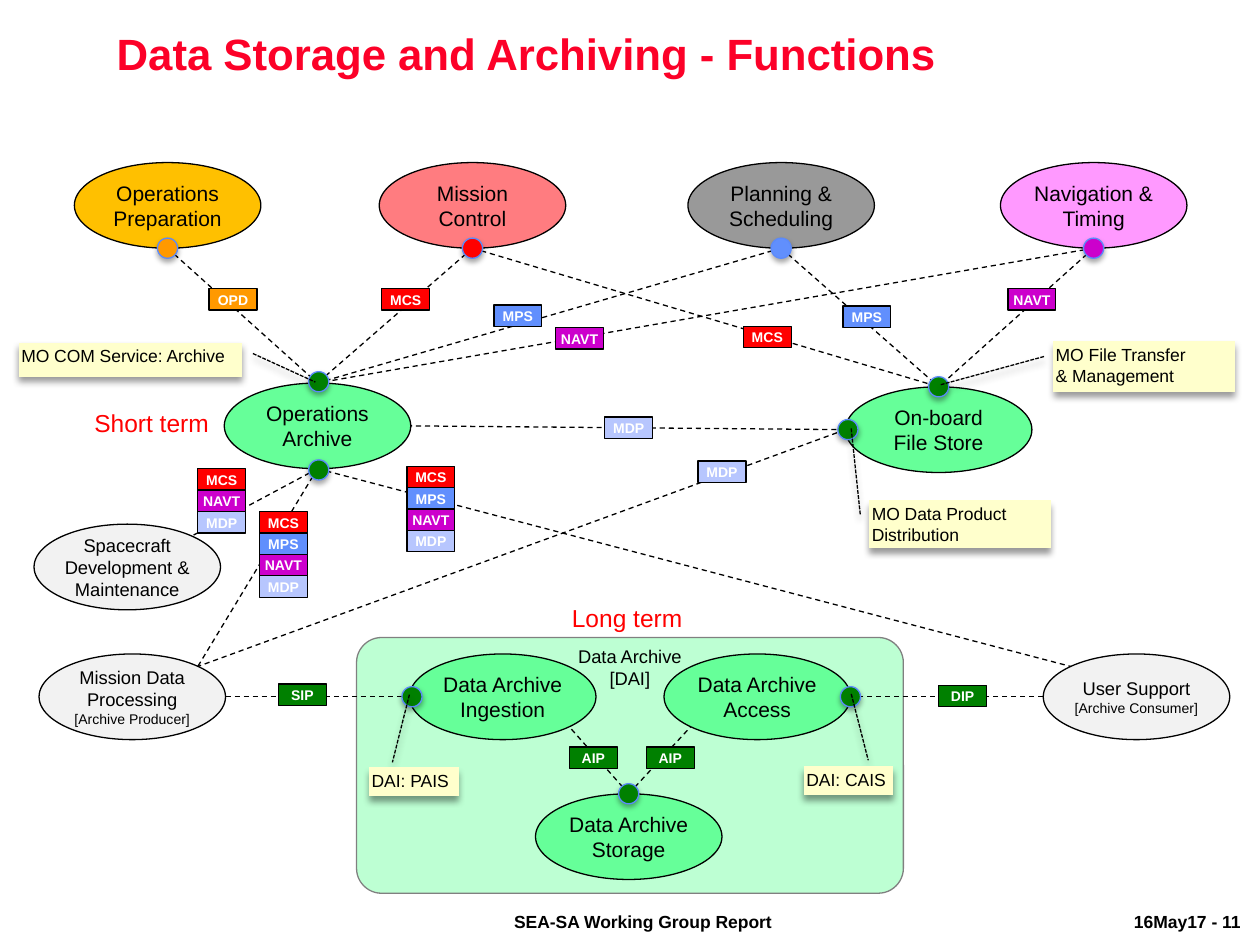
from lxml.etree import SubElement
from pptx import Presentation
from pptx.dml.color import RGBColor
from pptx.enum.dml import MSO_LINE
from pptx.enum.shapes import MSO_CONNECTOR, MSO_SHAPE
from pptx.enum.text import MSO_ANCHOR, PP_ALIGN
from pptx.oxml.ns import qn
from pptx.util import Inches, Pt

BLACK = RGBColor(0x00, 0x00, 0x00)
WHITE = RGBColor(0xFF, 0xFF, 0xFF)
CRIMSON = RGBColor(0xFC, 0x01, 0x28)
RED = RGBColor(0xFF, 0x00, 0x00)
GREEN = RGBColor(0x00, 0x80, 0x00)
MINT = RGBColor(0x66, 0xFF, 0x99)
PALE = RGBColor(0xBD, 0xFF, 0xD3)
EDGE = RGBColor(0x80, 0x80, 0x80)
PINK = RGBColor(0xFF, 0x99, 0xFF)
GRAY = RGBColor(0x99, 0x99, 0x99)
ROSE = RGBColor(0xFF, 0x7C, 0x80)
GOLD = RGBColor(0xFF, 0xC0, 0x00)
SMOKE = RGBColor(0xF2, 0xF2, 0xF2)
PURPLE = RGBColor(0xCC, 0x00, 0xCC)
BLUE = RGBColor(0x61, 0x8F, 0xFD)
RING = RGBColor(0x5B, 0x8A, 0xFB)
LILAC = RGBColor(0xB7, 0xC6, 0xFE)
ORANGE = RGBColor(0xFF, 0x99, 0x00)
CREAM = RGBColor(0xFF, 0xFF, 0xCC)


def write(shape, text, size=12, color=BLACK, bold=False, align=PP_ALIGN.CENTER,
          anchor=MSO_ANCHOR.TOP, pad=(0, 0), wrap=True, small=8):
    frame = shape.text_frame
    frame.text = text
    frame.word_wrap = wrap
    frame.vertical_anchor = anchor
    frame.margin_left = frame.margin_right = Inches(pad[0])
    frame.margin_top = frame.margin_bottom = Inches(pad[1])
    for i, para in enumerate(frame.paragraphs):
        para.alignment = align
        for run in para.runs:
            run.font.name = "Arial"
            run.font.size = Pt(small if i else size)
            run.font.bold = bold
            run.font.color.rgb = color


def draw(kind, box, fill, edge=BLACK, blur=0, drop=0, alpha=0):
    shape = slide.shapes.add_shape(kind, *map(Inches, box))
    shape.fill.solid()
    shape.fill.fore_color.rgb = fill
    shape.line.color.rgb = edge
    shape.line.width = Pt(0.75)
    shape.shadow.inherit = False
    if blur:
        effects = shape._element.spPr.find(qn("a:effectLst"))
        outer = SubElement(effects, qn("a:outerShdw"), blurRad=str(Pt(blur)),
                           dist=str(Pt(drop)), dir="5400000", rotWithShape="0")
        tint = SubElement(outer, qn("a:srgbClr"), val=str(BLACK))
        SubElement(tint, qn("a:alpha"), val=str(alpha * 1000))
    return shape


deck = Presentation()
deck.slide_width, deck.slide_height = Inches(10), Inches(7.5)
slide = deck.slides.add_slide(deck.slide_layouts[5])

title = slide.shapes.title
title.left, title.top, title.width, title.height = map(Inches, (0.2, 0.21, 7.95, 0.55))
write(title, "Data Storage and Archiving - Functions", size=25, color=CRIMSON,
      bold=True, pad=(0.1, 0.05))
title.text_frame.paragraphs[0].line_spacing = 0.9

zone = draw(MSO_SHAPE.ROUNDED_RECTANGLE, (2.83, 5.06, 4.34, 2.03), PALE, EDGE)
zone.adjustments[0] = 0.098
write(zone, "Data Archive\v[DAI]", size=10.5)

nodes = [
    (0.59, 1.29, GOLD, 12, "Operations\vPreparation"),
    (3.01, 1.29, ROSE, 12, "Mission\vControl"),
    (5.46, 1.29, GRAY, 12, "Planning & Scheduling"),
    (7.94, 1.29, PINK, 12, "Navigation & Timing"),
    (1.78, 3.04, MINT, 12, "Operations Archive"),
    (6.71, 3.07, MINT, 12, "On-board\vFile Store"),
    (0.27, 4.16, SMOKE, 10.5, "Spacecraft Development & Maintenance"),
    (0.31, 5.19, SMOKE, 10.5, "Mission Data\vProcessing\n[Archive Producer]"),
    (8.28, 5.19, SMOKE, 10.5, "User Support\n[Archive Consumer]"),
    (3.25, 5.19, MINT, 12, "Data Archive\vIngestion"),
    (5.27, 5.19, MINT, 12, "Data Archive\vAccess"),
    (4.25, 6.3, MINT, 12, "Data Archive\vStorage"),
]
for x, y, fill, size, text in nodes:
    node = draw(MSO_SHAPE.OVAL, (x, y, 1.48, 0.68), fill)
    write(node, text, size=size, anchor=MSO_ANCHOR.MIDDLE, pad=(0, 0.05))

prep, control, plan, nav = (1.33, 1.97), (3.75, 1.97), (6.2, 1.97), (8.68, 1.97)
top, base = (2.52, 3.04), (2.52, 3.72)
store, side = (7.45, 3.07), (6.71, 3.41)
data, pit = (1.57, 5.29), (4.99, 6.3)
links = [(start, top) for start in (prep, control, plan, nav)]
links += [(start, store) for start in (control, plan, nav)]
links += [(base, end) for end in ((1.53, 4.25), (8.5, 5.29), data)]
links += [(side, data), (side, (3.26, 3.38)), (pit, (5.48, 5.77)), (pit, (4.52, 5.77)),
          ((8.28, 5.53), (6.75, 5.53)), ((1.79, 5.53), (3.25, 5.53))]
for start, end in links:
    link = slide.shapes.add_connector(MSO_CONNECTOR.STRAIGHT, *map(Inches, start + end))
    link.line.color.rgb = BLACK
    link.line.width = Pt(0.75)
    link.line.dash_style = MSO_LINE.DASH
    SubElement(link._element.spPr, qn("a:effectLst"))

hues = {"OPD": ORANGE, "MCS": RED, "MPS": BLUE, "NAVT": PURPLE, "MDP": LILAC,
        "SIP": GREEN, "DIP": GREEN, "AIP": GREEN}
stacks = [
    (1.66, 2.29, "OPD"), (3.03, 2.29, "MCS"), (8, 2.29, "NAVT"),
    (3.92, 2.42, "MPS"), (6.69, 2.43, "MPS"), (5.9, 2.59, "MCS"),
    (4.41, 2.6, "NAVT"), (4.8, 3.31, "MDP"), (5.54, 3.66, "MDP"),
    (2.21, 5.43, "SIP"), (7.45, 5.44, "DIP"), (4.52, 5.93, "AIP"),
    (5.13, 5.93, "AIP"), (1.57, 3.72, "MCS NAVT MDP"),
    (3.23, 3.7, "MCS MPS NAVT MDP"), (2.06, 4.06, "MCS MPS NAVT MDP"),
]
for x, y, names in stacks:
    for i, name in enumerate(names.split()):
        tag = draw(MSO_SHAPE.RECTANGLE, (x, y + 0.17 * i, 0.38, 0.17), hues[name])
        write(tag, name, size=8, color=WHITE, bold=True, pad=(0.02, 0.02))

dots = [
    (1.25, 1.89, ORANGE), (3.67, 1.89, RED), (6.12, 1.89, BLUE), (8.6, 1.89, PURPLE),
    (2.45, 2.95, GREEN), (2.45, 3.65, GREEN), (7.37, 2.99, GREEN), (6.65, 3.33, GREEN),
    (3.19, 5.45, GREEN), (6.67, 5.45, GREEN), (4.91, 6.22, GREEN),
]
for x, y, fill in dots:
    draw(MSO_SHAPE.OVAL, (x, y, 0.16, 0.16), fill, RING, blur=3.1, drop=1.8, alpha=35)

notes = [
    ((0.15, 2.72, 1.77, 0.27), (0.32, -0.05, 1.16, -0.33), "MO COM Service: Archive"),
    ((8.36, 2.71, 1.44, 0.4), (0.86, 1.62, 0.3, 1.05), "MO File Transfer\v& Management"),
    ((6.9, 3.97, 1.44, 0.38), (-1.5, 1.1, 0.3, 1.05), "MO Data Product\vDistribution"),
    ((6.38, 6.08, 0.71, 0.23), (-2.49, 0.47, -0.2, 0.28), "DAI: CAIS"),
    ((2.93, 6.09, 0.71, 0.23), (-2.51, 0.55, -0.17, 0.74), "DAI: PAIS"),
]
for box, bends, text in notes:
    note = draw(MSO_SHAPE.LINE_CALLOUT_1_NO_BORDER, box, CREAM, blur=4, drop=3, alpha=40)
    note.line.dash_style = MSO_LINE.SQUARE_DOT
    note._element.spPr.xfrm.set("flipH", "1")
    for i, bend in enumerate(bends):
        note.adjustments[i] = bend
    write(note, text, size=10, align=PP_ALIGN.LEFT, pad=(0.02, 0.02))

labels = [
    ((0.65, 3.19, 1.12, 0.34), "Short term", 14, RED, False, (0.1, 0.05)),
    ((4.44, 4.74, 1.08, 0.34), "Long term", 14, RED, False, (0.1, 0.05)),
    ((3.99, 7.19, 2.26, 0.26), "SEA-SA Working Group Report", 10, BLACK, True, (0.09, 0.04)),
    ((8.91, 7.19, 1.06, 0.26), "16May17 - 11", 10, BLACK, True, (0.09, 0.04)),
]
for box, text, size, color, bold, pad in labels:
    label = slide.shapes.add_textbox(*map(Inches, box))
    write(label, text, size=size, color=color, bold=bold, align=PP_ALIGN.LEFT,
          pad=pad, wrap=False)

deck.save("out.pptx")
